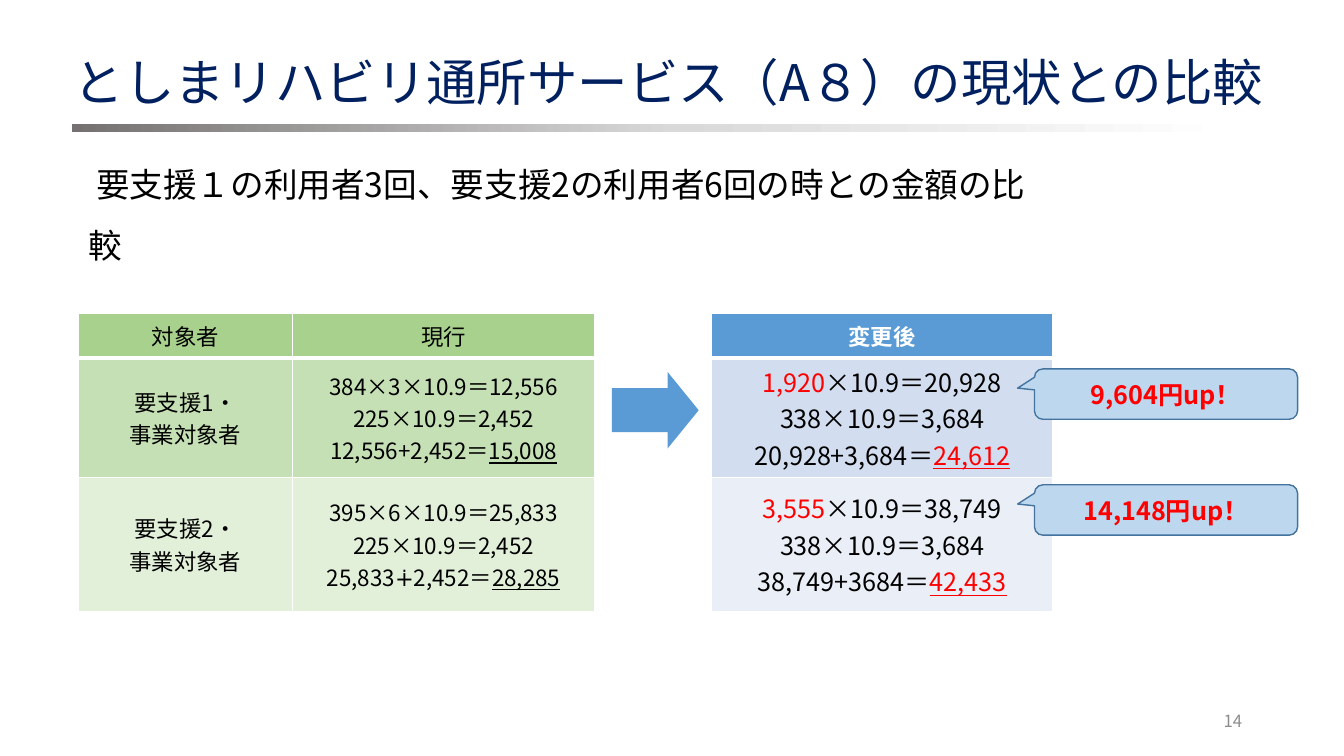
from copy import deepcopy
from dataclasses import dataclass

from lxml.etree import SubElement
from pptx import Presentation
from pptx.dml.color import RGBColor
from pptx.enum.shapes import MSO_SHAPE as Shape
from pptx.enum.text import MSO_ANCHOR as Anchor, MSO_AUTO_SIZE as AutoSize, PP_ALIGN as Align
from pptx.oxml.ns import qn
from pptx.util import Inches, Pt

FONT = "Noto Sans CJK JP"
BLACK, WHITE, RED, NAVY, GRAY = "000000", "FFFFFF", "FF0000", "002060", "8C8C8C"
BLUE, PALE_BLUE, OUTLINE = "5B9BD5", "BDD7EE", "43739E"


@dataclass(frozen=True)
class Part:
    text: str
    color: str = BLACK
    underline: bool = False


@dataclass(frozen=True)
class Cell:
    lines: list[list[Part]]
    fill: str
    size: int = 16
    bold: bool = False


@dataclass(frozen=True)
class Increase:
    text: str
    top: float


def rgb(value: str) -> RGBColor:
    return RGBColor.from_string(value)


def style_run(run, size: float, color: str, bold: bool = False, underline: bool = False) -> None:
    font = run.font
    font.name, font.size, font.bold, font.underline = FONT, Pt(size), bold, underline
    font.color.rgb = rgb(color)
    SubElement(font._element, qn("a:ea")).set("typeface", FONT)


def write_line(frame, text: str, size: float, color: str, align=Align.LEFT,
               anchor=Anchor.MIDDLE, bold: bool = False):
    frame.text = text
    frame.word_wrap = True
    frame.auto_size = AutoSize.NONE
    frame.vertical_anchor = anchor
    paragraph = frame.paragraphs[0]
    paragraph.alignment = align
    style_run(paragraph.runs[0], size, color, bold)
    return paragraph


def box(*lengths: float) -> list[int]:
    return [Inches(length) for length in lengths]


def add_plain_shape(slide, kind, bounds: tuple, adjustments: tuple = ()):
    """Add a preset shape without shadow or outline."""
    shape = slide.shapes.add_shape(kind, *box(*bounds))
    shape.shadow.inherit = False
    shape.line.fill.background()
    for index, value in enumerate(adjustments):
        shape.adjustments[index] = value
    return shape


def set_borders(cell, is_header: bool) -> None:
    properties = cell._tc.get_or_add_tcPr()
    for side in "LRTB":
        width = 3 if is_header and side == "B" else 1
        line = SubElement(properties, qn(f"a:ln{side}"), w=str(Pt(width)))
        fill = SubElement(line, qn("a:solidFill"))
        SubElement(fill, qn("a:srgbClr"), val=WHITE)


def fill_cell(cell, content: Cell) -> None:
    cell.fill.solid()
    cell.fill.fore_color.rgb = rgb(content.fill)
    cell.vertical_anchor = Anchor.MIDDLE
    for index, line in enumerate(content.lines):
        frame = cell.text_frame
        paragraph = frame.add_paragraph() if index else frame.paragraphs[0]
        paragraph.alignment = Align.CENTER
        for part in line:
            run = paragraph.add_run()
            run.text = part.text
            style_run(run, content.size, part.color, content.bold, part.underline)


def target(level: str, fill: str) -> Cell:
    return Cell([[Part(f"要支援{level}・")], [Part("事業対象者")]], fill)


def current(base: str, addition: str, total: str, fill: str) -> Cell:
    return Cell([[Part(base)], [Part("225×10.9＝2,452")],
                 [Part(addition), Part(total, underline=True)]], fill)


def revised(units: str, base: str, addition: str, total: str, fill: str) -> Cell:
    return Cell([[Part(units, RED), Part(base)], [Part("338×10.9＝3,684")],
                 [Part(addition), Part(total, RED, True)]], fill, 18)


COLUMNS = (2.12, 3, 1.16, 3.38)
ROWS = (0.44, 1.08, 1.33)
COMPARISON = [
    [Cell([[Part("対象者")]], "A9D18E"), Cell([[Part("現行")]], "A9D18E"), None,
     Cell([[Part("変更後", WHITE)]], BLUE, bold=True)],
    [target("1", "C5E0B4"),
     current("384×3×10.9＝12,556", "12,556+2,452＝", "15,008", "C5E0B4"), None,
     revised("1,920", "×10.9＝20,928", "20,928+3,684＝", "24,612", "D2DEEF")],
    [target("2", "E2F0D9"),
     current("395×6×10.9＝25,833", "25,833∔2,452＝", "28,285", "E2F0D9"), None,
     revised("3,555", "×10.9＝38,749", "38,749+3684＝", "42,433", "EAEFF7")],
]
INCREASES = [Increase("9,604円up！", 3.66), Increase("14,148円up！", 4.81)]


def add_comparison(slide) -> None:
    table = slide.shapes.add_table(len(ROWS), len(COLUMNS),
                                   *box(0.78, 3.11, sum(COLUMNS), sum(ROWS))).table
    for column, width in zip(table.columns, COLUMNS):
        column.width = Inches(width)
    for row, height in zip(table.rows, ROWS):
        row.height = Inches(height)
    for r, contents in enumerate(COMPARISON):
        for c, content in enumerate(contents):
            cell = table.cell(r, c)
            set_borders(cell, r == 0)
            if content:
                fill_cell(cell, content)
            else:
                cell.fill.background()


def add_increase(slide, increase: Increase) -> None:
    callout = add_plain_shape(slide, Shape.ROUNDED_RECTANGULAR_CALLOUT,
                              (10.26, increase.top, 2.61, 0.5), (-0.564, -0.118, 0.167))
    callout.fill.solid()
    callout.fill.fore_color.rgb = rgb(PALE_BLUE)
    callout.line.color.rgb = rgb(OUTLINE)
    callout.line.width = Pt(1)
    write_line(callout.text_frame, increase.text, 18, RED, Align.CENTER, bold=True)


def add_title_rule(slide) -> None:
    rule = add_plain_shape(slide, Shape.FLOWCHART_PROCESS, (0.71, 1.23, 11.5, 0.08))
    rule.fill.gradient()
    rule.fill.gradient_angle = 0
    stops = rule._element.spPr.find(qn("a:gradFill")).find(qn("a:gsLst"))
    stops.append(deepcopy(stops[0]))
    fades = ((0, "767171"), (0.52, "D9D9D9"), (1, WHITE))
    for stop, (position, color) in zip(rule.fill.gradient_stops, fades):
        stop.position = position
        stop.color.rgb = rgb(color)


def main() -> None:
    deck = Presentation()
    deck.slide_width, deck.slide_height = Inches(13.33), Inches(7.5)
    slide = deck.slides.add_slide(deck.slide_layouts[5])

    title = slide.shapes.title
    title.left, title.top, title.width, title.height = box(0.63, 0.38, 12.7, 0.85)
    write_line(title.text_frame, "としまリハビリ通所サービス（A８）の現状との比較", 36, NAVY)
    add_title_rule(slide)

    page_number = slide.shapes.add_textbox(*box(9.42, 6.95, 3, 0.4))
    write_line(page_number.text_frame, "14", 12, GRAY, Align.RIGHT)

    add_comparison(slide)
    arrow = add_plain_shape(slide, Shape.RIGHT_ARROW, (6.07, 3.69, 0.86, 0.76), (0.575, 0.406))
    arrow.fill.solid()
    arrow.fill.fore_color.rgb = rgb(BLUE)

    summary = slide.shapes.add_textbox(*box(0.78, 1.38, 9.81, 0.7))
    write_line(summary.text_frame, " 要支援１の利用者3回、要支援2の利用者6回の時との金額の比較",
               24, BLACK, anchor=Anchor.TOP).line_spacing = 1.5

    for increase in INCREASES:
        add_increase(slide, increase)
    deck.save("out.pptx")


if __name__ == "__main__":
    main()
